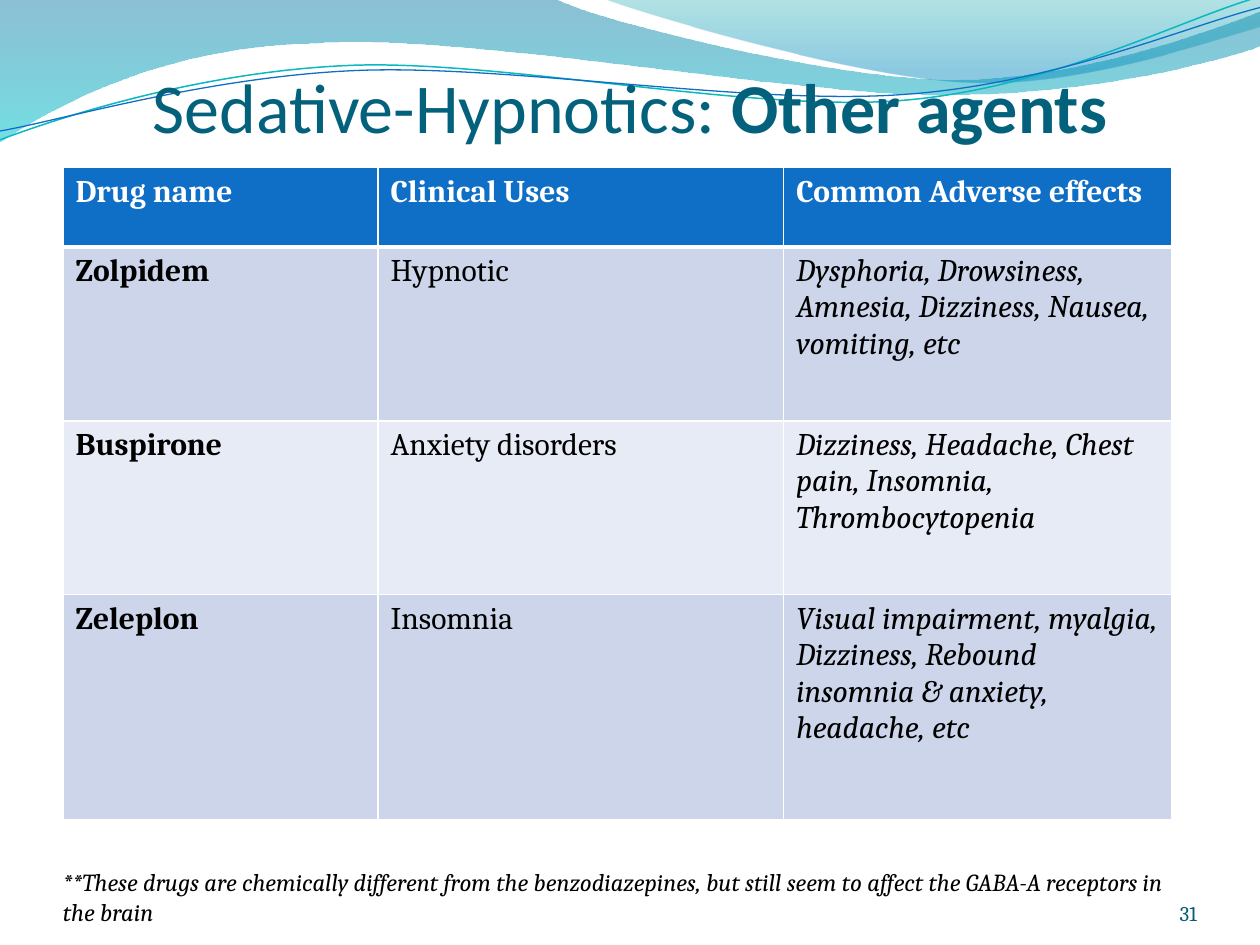
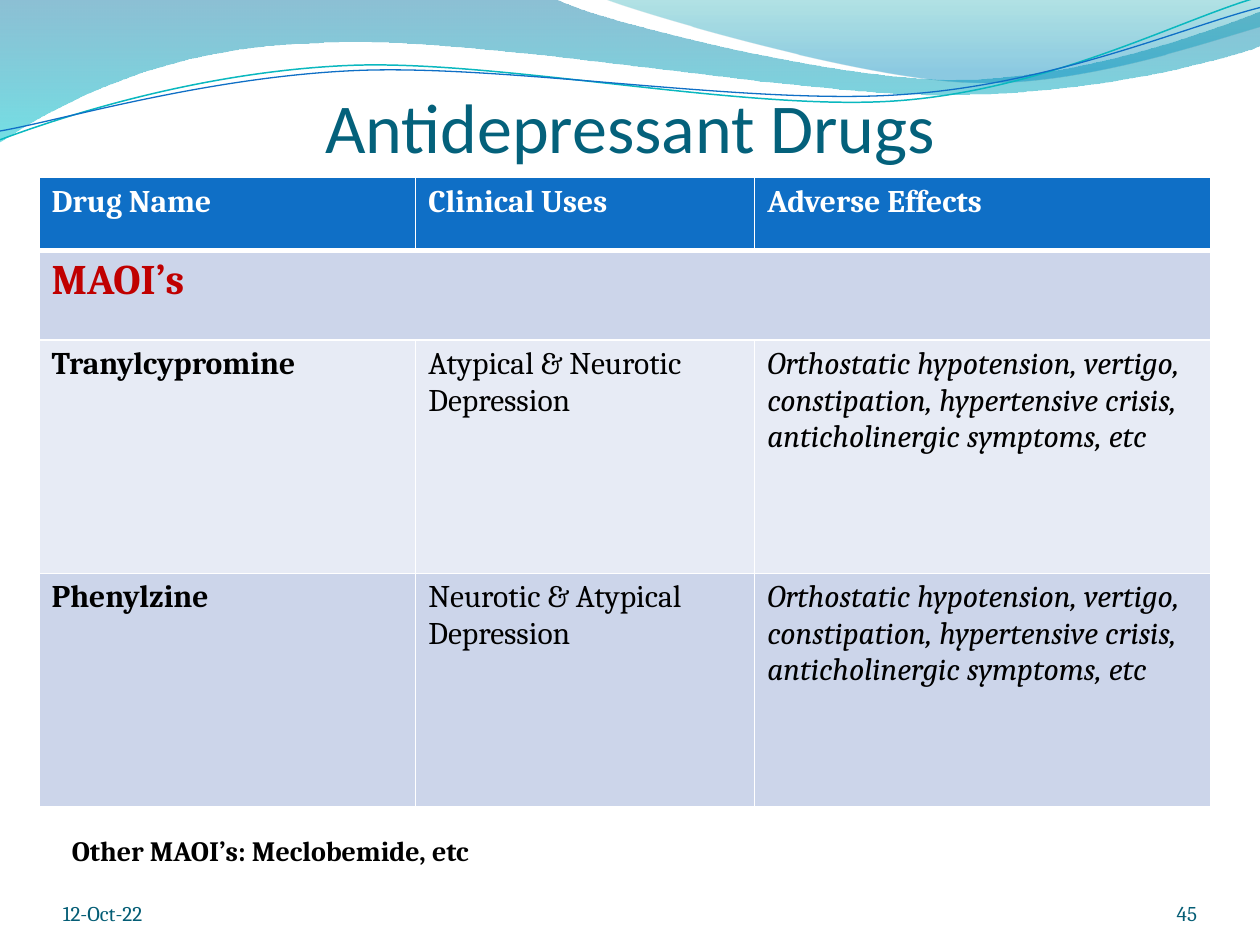
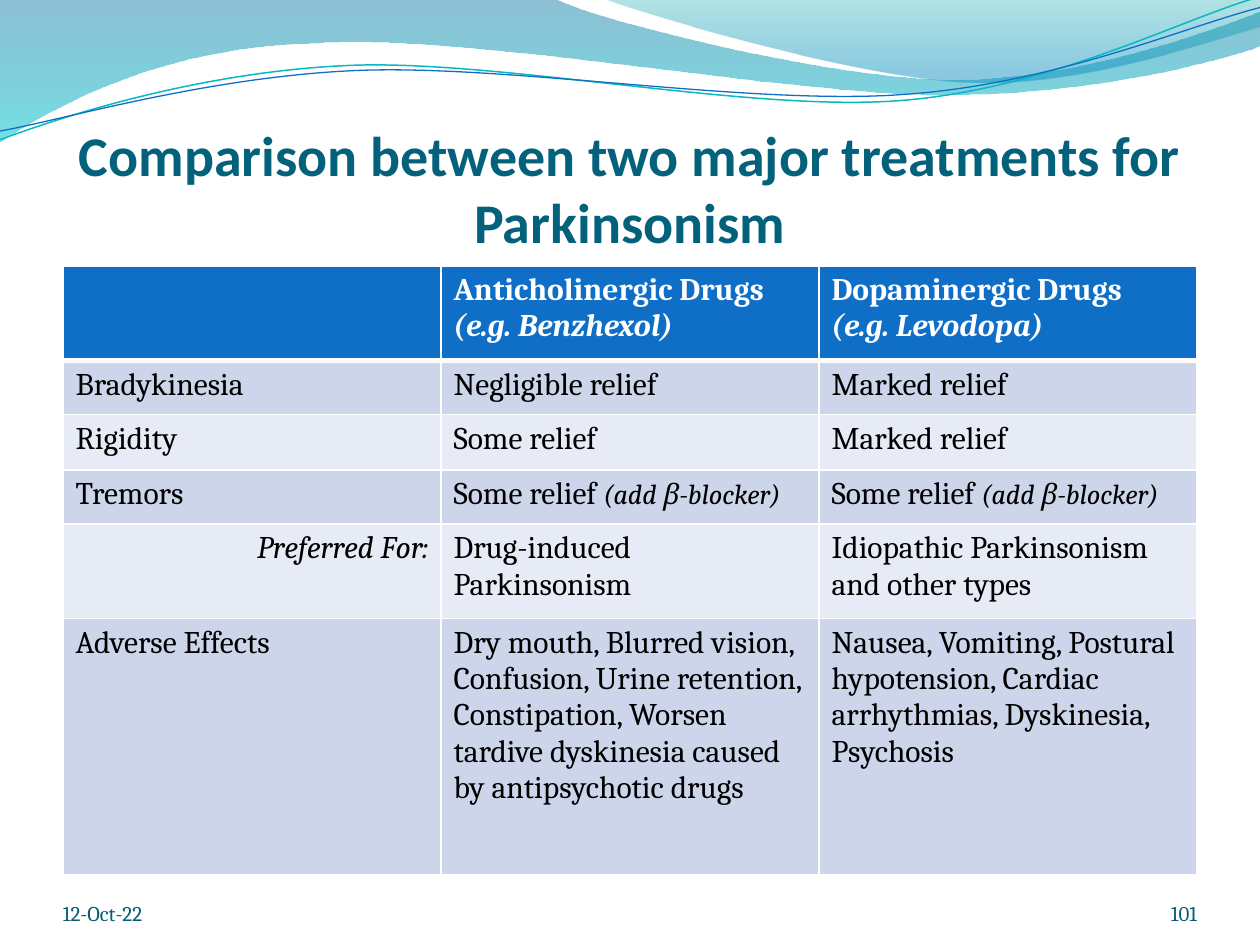
from pptx import Presentation
from pptx.dml.color import RGBColor
from pptx.enum.text import MSO_ANCHOR, MSO_AUTO_SIZE, PP_ALIGN
from pptx.oxml.ns import qn
from pptx.oxml.xmlchemy import OxmlElement
from pptx.util import Inches, Pt
from lxml.etree import SubElement

# Shared colours and fonts
TITLE_TEAL = RGBColor(0x04, 0x61, 0x7B)
FOOTER_TEAL = RGBColor(0x04, 0x5D, 0x75)
HEADER_BLUE = RGBColor(0x0F, 0x6F, 0xC6)
LINE_TEAL = RGBColor(0x0A, 0xB8, 0xBF)
BANDS = (RGBColor(0xCC, 0xD5, 0xEA), RGBColor(0xE7, 0xEB, 0xF5))
WHITE = RGBColor(0xFF, 0xFF, 0xFF)
BLACK = RGBColor(0x00, 0x00, 0x00)
RED = RGBColor(0xC0, 0x00, 0x00)
TITLE_FONT, BODY_FONT = "Calibri", "Cambria"

# Waves: start point, then straight steps (one point) or curves (three points)
WAVE_FILLS = [
    {"start": (0, 0),
     "steps": [[(4.4, -0.01)],
               [(4.76, 0.17), (6.64, 0.63), (7.58, 0.63)],
               [(8.53, 0.63), (9.58, 0.26), (10, 0.09)],
               [(10.01, 0.36)],
               [(9.83, 0.44), (8.7, 0.76), (7.46, 0.75)],
               [(6.22, 0.75), (3.82, 0.28), (2.57, 0.34)],
               [(1.29, 0.36), (0.46, 0.83), (-0.01, 1.13)]],
     # position, colour, opacity in percent
     "stops": [(0, RGBColor(0x00, 0x74, 0xA1), 45), (1, RGBColor(0x00, 0xC6, 0xCF), 55)]},
    {"start": (4.79, -0.01),
     "steps": [[(5.09, 0.11), (6.82, 0.62), (7.69, 0.65)],
               [(8.56, 0.69), (9.61, 0.32), (10, 0.21)],
               [(10, 0)]],
     "stops": [(0, RGBColor(0x00, 0xA1, 0xA9), 30), (0.8, RGBColor(0x00, 0x8B, 0xBF), 45)]},
]
WAVE_LINES = [
    {"start": (0, 1.11),
     "steps": [[(0.48, 0.93), (1.58, 0.57), (2.77, 0.52)],
               [(3.95, 0.47), (5.93, 0.89), (7.13, 0.8)],
               [(8.33, 0.71), (9.38, 0.15), (9.98, -0.02)]],
     "color": LINE_TEAL, "width": 0.85},
    {"start": (0, 1.04),
     "steps": [[(0.47, 0.96), (1.64, 0.61), (2.83, 0.56)],
               [(4.03, 0.51), (5.97, 0.84), (7.17, 0.75)],
               [(8.36, 0.67), (9.41, 0.21), (10, 0.06)]],
     "color": HEADER_BLUE, "width": 0.75},
]

# Slide content; a cell is a string or a list of paragraphs, each a list of runs
BOLD, ITALIC, PLAIN = {"bold": True}, {"italic": True}, {}
DRUG_COLUMNS = (BOLD, PLAIN, ITALIC)
DATE = "12-Oct-22"
MAOI_EFFECTS = ("Orthostatic hypotension, vertigo, constipation, hypertensive crisis, "
                "anticholinergic symptoms, etc")
TREMOR_RELIEF = [[("Some relief ", PLAIN), ("(add β-blocker)", {"italic": True, "size": 16})]]

SLIDES = [
    {"title": [("Sedative-Hypnotics: ", PLAIN), ("Other agents", BOLD)],
     "title_box": (0.5, 0.47, 9, 0.7), "title_size": 40,
     "table_at": (0.5, 1.33),
     "columns": (2.5, 3.22, 3.08), "row_heights": (0.63, 1.38, 1.38, 1.79),
     "column_styles": DRUG_COLUMNS,
     "rows": [
         ["Drug name", "Clinical Uses", "Common Adverse effects"],
         ["Zolpidem", "Hypnotic",
          "Dysphoria, Drowsiness, Amnesia, Dizziness, Nausea, vomiting, etc"],
         ["Buspirone", "Anxiety disorders",
          "Dizziness, Headache, Chest pain, Insomnia, Thrombocytopenia"],
         ["Zeleplon", "Insomnia",
          "Visual impairment, myalgia, Dizziness, Rebound insomnia & anxiety, headache, etc"]],
     "note": ("**These drugs are chemically different from the benzodiazepines, but still seem "
              "to affect the GABA-A receptors in the brain", {"italic": True, "size": 14}),
     "note_box": (0.5, 6.95, 8.8, 0.4),
     "number": "31"},
    {"title": [("Antidepressant Drugs", PLAIN)],
     "title_box": (0.5, 0.47, 9, 0.86), "title_size": 40,
     "table_at": (0.31, 1.41),
     "columns": (2.99, 2.69, 3.62), "row_heights": (0.58, 0.71, 1.85, 1.85),
     "column_styles": DRUG_COLUMNS,
     "rows": [
         ["Drug Name", "Clinical Uses", "Adverse Effects"],
         [[[("MAOI’s", {"size": 24, "color": RED})]]],
         ["Tranylcypromine", "Atypical & Neurotic Depression", MAOI_EFFECTS],
         ["Phenylzine", "Neurotic & Atypical Depression", MAOI_EFFECTS]],
     "note": ("Other MAOI’s: Meclobemide, etc", {"bold": True, "size": 16}),
     "note_box": (0.57, 6.5, 3.58, 0.38),
     "date": DATE, "number": "45"},
    {"title": [("Comparison between two major treatments for Parkinsonism", BOLD)],
     "title_box": (0.5, 0.77, 9, 1.25), "title_size": 32,
     "table_at": (0.5, 2.11),
     "columns": (3, 3, 3), "row_heights": (0.75, 0.43, 0.44, 0.43, 0.75, 2.03),
     "column_styles": (PLAIN, PLAIN, PLAIN),
     "rows": [
         ["",
          [[("Anticholinergic Drugs", PLAIN)], [("(e.g. Benzhexol)", ITALIC)]],
          [[("Dopaminergic Drugs", PLAIN)], [("(e.g. Levodopa)", ITALIC)]]],
         ["Bradykinesia", "Negligible relief", "Marked relief"],
         ["Rigidity", "Some relief", "Marked relief"],
         ["Tremors", TREMOR_RELIEF, TREMOR_RELIEF],
         [[[("Preferred For:", {"italic": True, "align": PP_ALIGN.RIGHT})]],
          "Drug-induced Parkinsonism", "Idiopathic Parkinsonism and other types"],
         ["Adverse Effects",
          [[("Dry mouth, Blurred vision, Confusion, Urine retention, Constipation, "
             "Worsen tardive dyskinesia caused", PLAIN)],
           [("by antipsychotic drugs", PLAIN)]],
          "Nausea, Vomiting, Postural hypotension, Cardiac arrhythmias, Dyskinesia, Psychosis"]],
     "date": DATE, "number": "101"},
]


def write_runs(paragraph, runs, base):
    """Add styled runs; each run's style overrides the base style."""
    for text, own_style in runs:
        style = {"font": BODY_FONT, "size": 18, "color": BLACK, **base, **own_style}
        run = paragraph.add_run()
        run.text = text
        run.font.name = style["font"]
        run.font.size = Pt(style["size"])
        run.font.color.rgb = style["color"]
        run.font.bold = style.get("bold", False)
        run.font.italic = style.get("italic", False)
        if "align" in style:
            paragraph.alignment = style["align"]


# Waves
def draw_wave(slide, wave, close):
    """Draw the outline through all points, then bend each three-point step into a curve."""
    points = [(Inches(x), Inches(y)) for step in wave["steps"] for x, y in step]
    builder = slide.shapes.build_freeform(*map(Inches, wave["start"]))
    builder.add_line_segments(points, close=close)
    shape = builder.convert_to_shape()
    shape.shadow.inherit = False
    segments = iter(list(shape.element.iter(qn("a:lnTo"))))
    for step in wave["steps"]:
        group = [next(segments) for _ in step]
        if len(group) == 3:
            curve = OxmlElement("a:cubicBezTo")
            group[0].addprevious(curve)
            for segment in group:
                curve.append(segment[0])
                segment.getparent().remove(segment)
    return shape


def add_waves(slide, layout):
    """Build the waves and place them on the layout, behind its placeholders."""
    shapes = []
    for wave in WAVE_FILLS:
        shape = draw_wave(slide, wave, close=True)
        shape.line.fill.background()
        shape.fill.gradient()
        shape.fill.gradient_angle = 270
        for stop, (position, color, _) in zip(shape.fill.gradient_stops, wave["stops"]):
            stop.position = position
            stop.color.rgb = color
        colors = shape.element.spPr.iter(qn("a:srgbClr"))
        for color_element, (_, _, opacity) in zip(colors, wave["stops"]):
            SubElement(color_element, qn("a:alpha")).set("val", str(opacity * 1000))
        shapes.append(shape)
    for wave in WAVE_LINES:
        shape = draw_wave(slide, wave, close=False)
        shape.fill.background()
        shape.line.color.rgb = wave["color"]
        shape.line.width = Pt(wave["width"])
        shapes.append(shape)
    for index, shape in enumerate(shapes):
        shape.element.nvSpPr.cNvPr.set("id", str(100 + index))
        layout.shapes.element.insert(2 + index, shape.element)


# Titles, tables and footers
def set_title(slide, content):
    title = slide.shapes.title
    title.left, title.top, title.width, title.height = map(Inches, content["title_box"])
    frame = title.text_frame
    frame.auto_size = MSO_AUTO_SIZE.NONE
    frame.vertical_anchor = MSO_ANCHOR.BOTTOM
    frame.margin_left = frame.margin_right = frame.margin_bottom = 0
    frame.margin_top = Inches(0.05)
    write_runs(frame.paragraphs[0], content["title"],
               {"font": TITLE_FONT, "size": content["title_size"], "color": TITLE_TEAL,
                "align": PP_ALIGN.CENTER})


def set_borders(cell, top, bottom):
    """White borders: 1 pt at the sides, the given widths above and below."""
    properties = cell._tc.get_or_add_tcPr()
    for side, width in (("L", 1), ("R", 1), ("T", top), ("B", bottom)):
        line = SubElement(properties, qn(f"a:ln{side}"), w=str(Pt(width)))
        fill = SubElement(line, qn("a:solidFill"))
        SubElement(fill, qn("a:srgbClr"), val=str(WHITE))


def fill_cell(cell, value, base):
    paragraphs = [[(value, PLAIN)]] if isinstance(value, str) else value
    frame = cell.text_frame
    for index, runs in enumerate(paragraphs):
        paragraph = frame.add_paragraph() if index else frame.paragraphs[0]
        write_runs(paragraph, runs, base)


def add_drug_table(slide, content):
    widths, heights, rows = content["columns"], content["row_heights"], content["rows"]
    left, top = content["table_at"]
    table = slide.shapes.add_table(len(rows), len(widths), Inches(left), Inches(top),
                                   Inches(sum(widths)), Inches(sum(heights))).table
    for column, width in zip(table.columns, widths):
        column.width = Inches(width)
    for row_index, values in enumerate(rows):
        table.rows[row_index].height = Inches(heights[row_index])
        is_header = row_index == 0
        for cell in table.rows[row_index].cells:
            set_borders(cell, top=3 if row_index == 1 else 1, bottom=3 if is_header else 1)
            cell.fill.solid()
            cell.fill.fore_color.rgb = HEADER_BLUE if is_header else BANDS[(row_index - 1) % 2]
        if len(values) == 1:
            table.cell(row_index, 0).merge(table.cell(row_index, len(widths) - 1))
        for column_index, value in enumerate(values):
            base = {"bold": True, "color": WHITE} if is_header else content["column_styles"][column_index]
            if value:
                fill_cell(table.cell(row_index, column_index), value, base)


def add_text(slide, box, run, base):
    frame = slide.shapes.add_textbox(*map(Inches, box)).text_frame
    frame.word_wrap = True
    frame.vertical_anchor = MSO_ANCHOR.BOTTOM
    frame.margin_left = frame.margin_right = frame.margin_top = frame.margin_bottom = 0
    write_runs(frame.paragraphs[0], [run], base)


def add_footer(slide, content):
    style = {"size": 12, "color": FOOTER_TEAL}
    if "date" in content:
        add_text(slide, (0.5, 6.95, 2.33, 0.4), (content["date"], PLAIN), style)
    add_text(slide, (8.67, 6.95, 0.83, 0.4), (content["number"], {"align": PP_ALIGN.RIGHT}), style)


def main():
    presentation = Presentation()
    presentation.slide_width, presentation.slide_height = Inches(10), Inches(7.5)
    layout = presentation.slide_layouts.get_by_name("Title Only")
    for index, content in enumerate(SLIDES):
        slide = presentation.slides.add_slide(layout)
        if index == 0:
            add_waves(slide, layout)
        set_title(slide, content)
        add_drug_table(slide, content)
        if "note" in content:
            add_text(slide, content["note_box"], content["note"], PLAIN)
        add_footer(slide, content)
    presentation.save("out.pptx")


if __name__ == "__main__":
    main()
